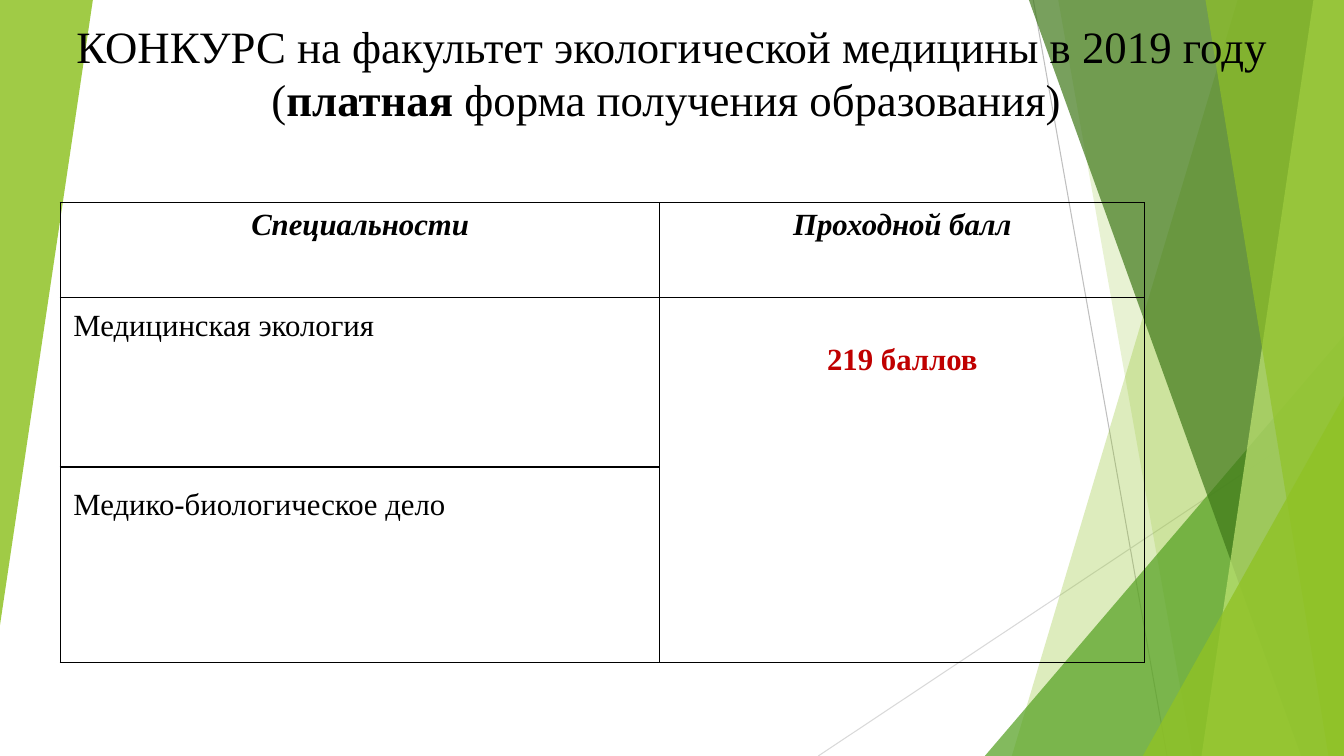
from lxml.etree import SubElement
from pptx import Presentation
from pptx.dml.color import RGBColor
from pptx.enum.shapes import MSO_CONNECTOR, MSO_SHAPE
from pptx.enum.text import MSO_ANCHOR, MSO_AUTO_SIZE, PP_ALIGN
from pptx.oxml.ns import qn
from pptx.util import Cm, Pt

BLACK = RGBColor(0x00, 0x00, 0x00)
RED = RGBColor(0xC0, 0x00, 0x00)
GREY = RGBColor(0xBF, 0xBF, 0xBF)
LIGHT_GREY = RGBColor(0xD9, 0xD9, 0xD9)
LIME = RGBColor(0x90, 0xC2, 0x26)
PALE_LIME = RGBColor(0xC0, 0xE4, 0x74)
GREEN = RGBColor(0x54, 0xA0, 0x21)
DARK_GREEN = RGBColor(0x3F, 0x78, 0x19)

WIDTH, HEIGHT = 33.87, 19.05


class FacetSlide:
    font_name = "Times New Roman"
    title_size = Pt(32)
    table_size = Pt(22)

    def __init__(self, deck):
        self.slide = deck.slides.add_slide(deck.slide_layouts[5])
        self.shapes = self.slide.shapes

    def style_run(self, run, size, color=BLACK, bold=False, italic=False):
        font = run.font
        font.name, font.size = self.font_name, size
        font.bold, font.italic = bold, italic
        font.color.rgb = color

    def tint(self, shape, color, opacity):
        """Fill without outline, opacity in percent."""
        shape.shadow.inherit = False
        shape.line.fill.background()
        shape.fill.solid()
        shape.fill.fore_color.rgb = color
        solid_color = shape.fill._xPr.find(qn("a:solidFill"))[0]
        SubElement(solid_color, qn("a:alpha"), val=str(opacity * 1000))

    def thin_line(self, start, end, color):
        ends = [Cm(value) for value in (*start, *end)]
        line = self.shapes.add_connector(MSO_CONNECTOR.STRAIGHT, *ends)
        line.line.color.rgb = color
        line.line.width = Pt(0.75)
        SubElement(line._element.spPr, qn("a:effectLst"))

    def band(self, top_x, bottom_x, color, opacity):
        """Area between a slanted edge and the slide's right side."""
        outline = self.shapes.build_freeform(Cm(top_x), 0)
        corners = [(WIDTH, 0), (WIDTH, HEIGHT), (bottom_x, HEIGHT)]
        outline.add_line_segments([(Cm(x), Cm(y)) for x, y in corners])
        self.tint(outline.convert_to_shape(), color, opacity)

    def corner(self, left, top, width, height, color, opacity, rotation=0):
        triangle = self.shapes.add_shape(
            MSO_SHAPE.ISOSCELES_TRIANGLE, Cm(left), Cm(top), Cm(width), Cm(height))
        triangle.adjustments[0] = 1
        triangle.rotation = rotation
        self.tint(triangle, color, opacity)

    def title(self, parts):
        """Write (text, bold) parts into the title, above the decoration."""
        title = self.shapes.title
        title.left, title.top = Cm(0), Cm(1.57)
        title.width, title.height = Cm(WIDTH), Cm(1.73)
        frame = title.text_frame
        frame.word_wrap = True
        frame.auto_size = MSO_AUTO_SIZE.NONE
        frame.vertical_anchor = MSO_ANCHOR.BOTTOM
        heading = frame.paragraphs[0]
        heading.alignment = PP_ALIGN.CENTER
        for text, bold in parts:
            run = heading.add_run()
            run.text = text
            self.style_run(run, self.title_size, bold=bold)
        self.shapes._spTree.append(title._element)

    def table(self, left, top, widths, heights):
        frame = self.shapes.add_table(
            len(heights), len(widths), Cm(left), Cm(top),
            Cm(sum(widths)), Cm(sum(heights)))
        table = frame.table
        table.first_row = table.horz_banding = False
        for column, width in zip(table.columns, widths):
            column.width = Cm(width)
        for row, height in zip(table.rows, heights):
            row.height = Cm(height)
        for cell in table.iter_cells():
            self.frame_cell(cell)
        return table

    def frame_cell(self, cell):
        properties = cell._tc.get_or_add_tcPr()
        for side in ("lnL", "lnR", "lnT", "lnB"):
            border = SubElement(properties, qn(f"a:{side}"), w=str(Pt(1)))
            fill = SubElement(border, qn("a:solidFill"))
            SubElement(fill, qn("a:srgbClr"), val=str(BLACK))
        cell.fill.background()

    def cell_text(self, cell, text, top=0.13, align=PP_ALIGN.CENTER, **style):
        cell.margin_left = cell.margin_right = Cm(0.33)
        cell.margin_top, cell.margin_bottom = Cm(top), Cm(0.13)
        cell.vertical_anchor = MSO_ANCHOR.TOP
        cell.text_frame.text = text
        paragraph = cell.text_frame.paragraphs[0]
        paragraph.alignment = align
        self.style_run(paragraph.runs[0], self.table_size, **style)


def main():
    deck = Presentation()
    deck.slide_width, deck.slide_height = Cm(WIDTH), Cm(HEIGHT)
    page = FacetSlide(deck)

    page.thin_line((26.04, 0), (29.41, HEIGHT), GREY)
    page.thin_line((WIDTH, 10.24), (20.62, HEIGHT), LIGHT_GREY)
    page.band(31.19, 25.5, LIME, 30)
    page.band(26.67, 30.05, LIME, 20)
    page.corner(24.82, 8.46, 9.05, 10.59, GREEN, 72)
    page.band(25.93, 32.79, DARK_GREEN, 70)
    page.band(33.1, 30.28, PALE_LIME, 70)
    page.band(30.38, 33.48, LIME, 65)
    page.corner(28.8, 9.98, 5.07, 9.07, LIME, 80)
    page.corner(0, 0, 2.34, 15.75, LIME, 85, rotation=180)

    page.title([
        ("КОНКУРС на факультет экологической медицины в 2019 году (", False),
        ("платная", True),
        (" форма получения образования) ", False),
    ])

    scores = page.table(1.52, 5.11, widths=(15.11, 12.22), heights=(2.39, 4.27, 4.93))
    for column, header in enumerate(("Специальности", "Проходной балл")):
        page.cell_text(scores.cell(0, column), header, bold=True, italic=True)
    specialities = (("Медицинская экология", 0.28), ("Медико-биологическое дело", 0.53))
    for row, (speciality, top) in enumerate(specialities, start=1):
        page.cell_text(scores.cell(row, 0), speciality, top, PP_ALIGN.LEFT)
    passing_score = scores.cell(1, 1)
    passing_score.merge(scores.cell(2, 1))
    page.cell_text(passing_score, "219 баллов", 1.14, color=RED, bold=True)

    deck.save("out.pptx")


if __name__ == "__main__":
    main()
